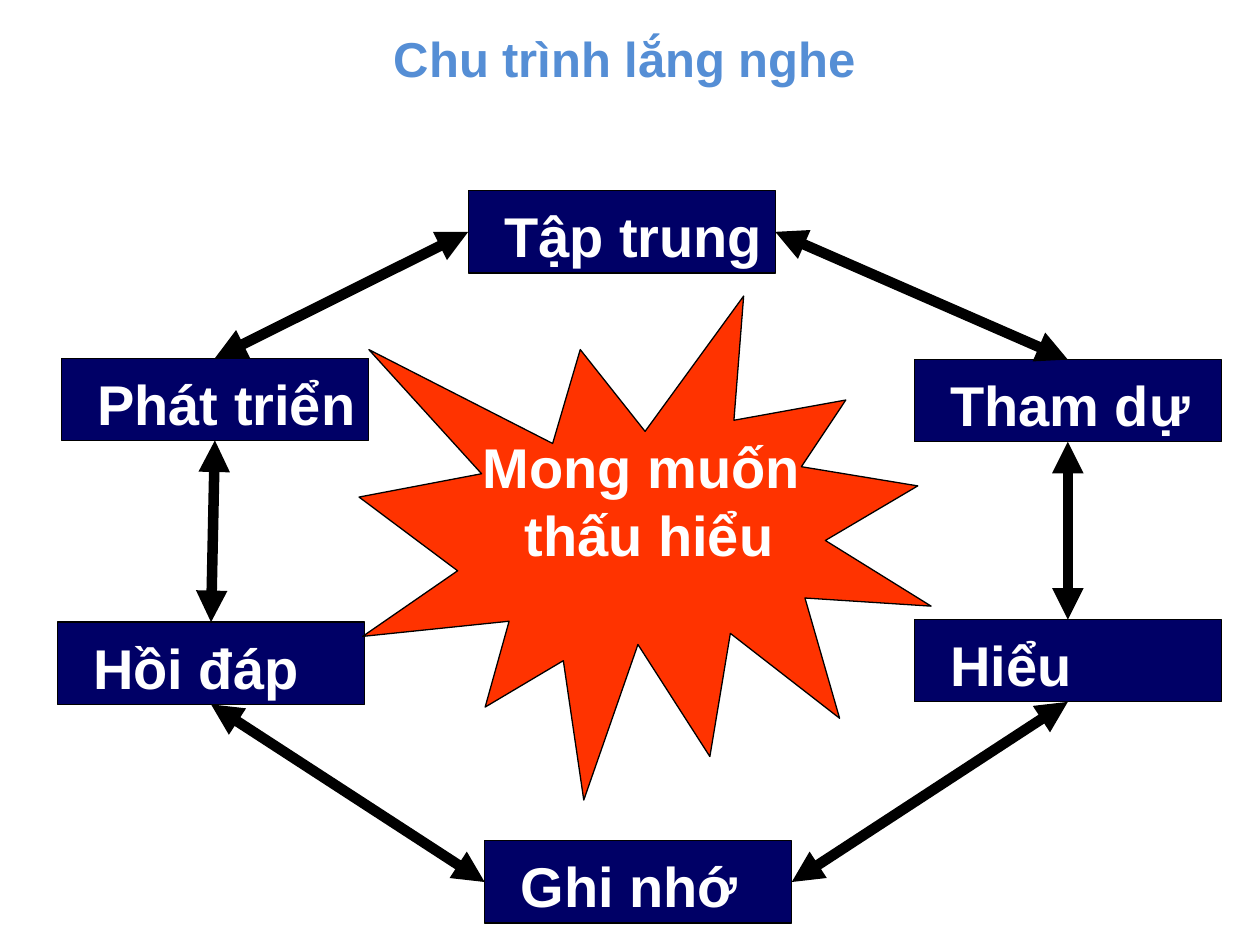
from dataclasses import dataclass

from lxml.etree import SubElement
from pptx import Presentation
from pptx.dml.color import RGBColor
from pptx.enum.shapes import MSO_CONNECTOR as Connector, MSO_SHAPE as Shape
from pptx.enum.text import MSO_ANCHOR as Anchor, PP_ALIGN as Align
from pptx.oxml.ns import qn
from pptx.util import Pt


@dataclass(frozen=True)
class Theme:
    font: str = "Arial"
    title: RGBColor = RGBColor(0x55, 0x8E, 0xD5)
    step: RGBColor = RGBColor(0x00, 0x00, 0x66)
    burst: RGBColor = RGBColor(0xFF, 0x33, 0x00)
    ink: RGBColor = RGBColor(0, 0, 0)
    light: RGBColor = RGBColor(0xFF, 0xFF, 0xFF)
    title_size: float = 28
    label_size: float = 32
    outline: float = 0.75
    arrow: float = 6


THEME = Theme()
TOP, LEFT, BOTTOM, RIGHT = range(4)
STEP_WIDTH, STEP_HEIGHT = 175.5, 47
STEP_CENTRES = {
    "Tập trung": (355.3, 132.5),
    "Tham dự": (610.2, 229),
    "Hiểu": (610.2, 377.6),
    "Ghi nhớ": (364.7, 504),
    "Hồi đáp": (120.6, 379),
    "Phát triển": (122.8, 228.2),
}
LINKS = [
    ("Tập trung", RIGHT, "Tham dự", TOP),
    ("Tham dự", BOTTOM, "Hiểu", TOP),
    ("Phát triển", BOTTOM, "Hồi đáp", TOP),
    ("Hồi đáp", BOTTOM, "Ghi nhớ", LEFT),
    ("Tập trung", LEFT, "Phát triển", TOP),
    ("Ghi nhớ", RIGHT, "Hiểu", BOTTOM),
]


def write(frame, lines, size, color, align, insets):
    frame.vertical_anchor = Anchor.MIDDLE
    (frame.margin_left, frame.margin_top,
     frame.margin_right, frame.margin_bottom) = map(Pt, insets)
    for number, line in enumerate(lines):
        paragraph = frame.add_paragraph() if number else frame.paragraphs[0]
        paragraph.alignment = align
        run = paragraph.add_run()
        run.text = line
        run.font.name = THEME.font
        run.font.size = Pt(size)
        run.font.bold = True
        run.font.color.rgb = color


def add_title(slide, box):
    title = slide.shapes.title
    title.left, title.top, title.width, title.height = map(Pt, box)
    title.text_frame.word_wrap = True
    write(title.text_frame, ["Chu trình lắng nghe"], THEME.title_size,
          THEME.title, Align.CENTER, (7.2, 3.6, 7.2, 3.6))


def add_panel(slide, kind, box, fill):
    panel = slide.shapes.add_shape(kind, *map(Pt, box))
    panel.shadow.inherit = False
    panel.fill.solid()
    panel.fill.fore_color.rgb = fill
    panel.line.color.rgb = THEME.ink
    panel.line.width = Pt(THEME.outline)
    return panel


def add_step(slide, label, box):
    step = add_panel(slide, Shape.RECTANGLE, box, THEME.step)
    step.text_frame.word_wrap = True
    write(step.text_frame, [label], THEME.label_size, THEME.light,
          Align.LEFT, (20.5, 4, 0, 0))
    return step


def add_burst(slide, box):
    burst = add_panel(slide, Shape.EXPLOSION1, box, THEME.burst)
    burst.text_frame.word_wrap = False
    write(burst.text_frame, ["Mong muốn", " thấu hiểu"], THEME.label_size,
          THEME.light, Align.CENTER, (7.2, 3.6, 7.2, 40.4))


def add_link(slide, source, source_side, target, target_side):
    link = slide.shapes.add_connector(Connector.STRAIGHT, 0, 0, 0, 0)
    link.begin_connect(source, source_side)
    link.end_connect(target, target_side)
    link.line.color.rgb = THEME.ink
    link.line.width = Pt(THEME.arrow)
    properties = link._element.spPr
    for end in ("a:headEnd", "a:tailEnd"):
        SubElement(properties.find(qn("a:ln")), qn(end), type="triangle")
    SubElement(properties, qn("a:effectLst"))


def add_cycle(slide):
    steps = {}
    for label, (x, y) in STEP_CENTRES.items():
        box = (x - STEP_WIDTH / 2, y - STEP_HEIGHT / 2, STEP_WIDTH, STEP_HEIGHT)
        steps[label] = add_step(slide, label, box)
    add_burst(slide, (205.2, 169.2, 326.9, 288))
    for source, source_side, target, target_side in LINKS:
        add_link(slide, steps[source], source_side, steps[target], target_side)


def main():
    deck = Presentation()
    deck.slide_width, deck.slide_height = Pt(720), Pt(540)
    slide = deck.slides.add_slide(deck.slide_layouts[5])
    add_title(slide, (210.2, 0, 293.8, 66.2))
    add_cycle(slide)
    deck.save("out.pptx")


if __name__ == "__main__":
    main()
